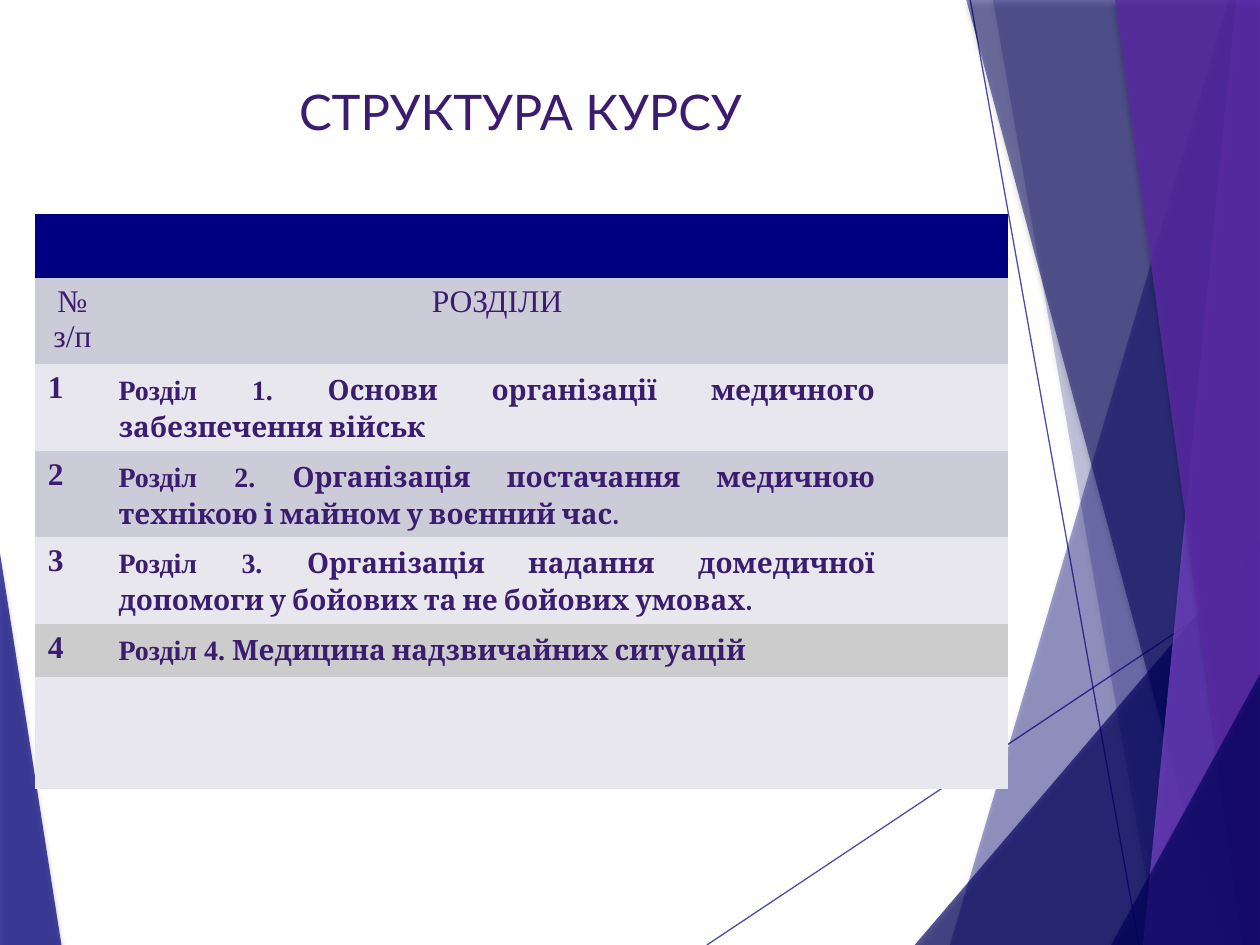
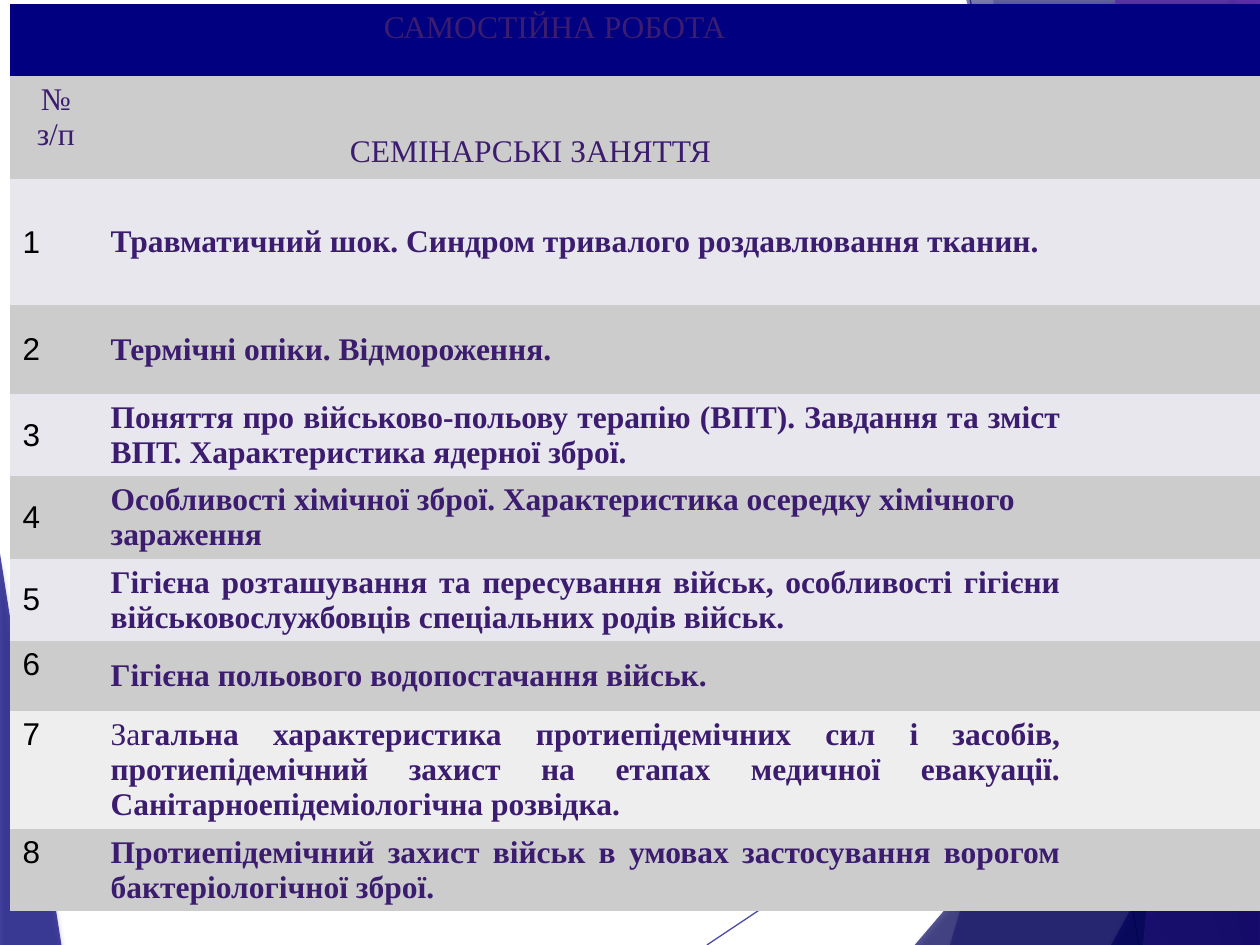
from dataclasses import dataclass
from typing import NamedTuple

from lxml import etree
from pptx import Presentation
from pptx.dml.color import RGBColor
from pptx.enum.shapes import MSO_CONNECTOR
from pptx.enum.text import MSO_ANCHOR, PP_ALIGN
from pptx.oxml.ns import qn
from pptx.util import Cm, Pt

LEFT, CENTER, JUSTIFY = PP_ALIGN.LEFT, PP_ALIGN.CENTER, PP_ALIGN.JUSTIFY
TOP, MIDDLE = MSO_ANCHOR.TOP, MSO_ANCHOR.MIDDLE
STRAIGHT = MSO_CONNECTOR.STRAIGHT
PLAIN_TABLE = "{2D5ABB26-0587-4C30-8999-92F81FD0307C}"
W, H = 25.4, 19.05


class Type(NamedTuple):
    font: str
    size: int
    color: str
    bold: bool = False


@dataclass(frozen=True)
class Theme:
    navy: str = "000080"
    deep: str = "000060"
    lilac: str = "7B46D0"
    purple: str = "5A2AA6"
    light: str = "E7E7ED"
    pale: str = "EEEEEE"
    bluish: str = "CCCCD8"
    gray: str = "CCCCCC"
    title: Type = Type("Lato", 28, "3C1C6F")
    head: Type = Type("Times New Roman", 18, "3C1C6F")
    strong: Type = Type("Times New Roman", 18, "3C1C6F", True)
    label: Type = Type("Times New Roman", 16, "3C1C6F", True)
    topic: Type = Type("Cambria", 16, "3C1C6F", True)
    number: Type = Type("Arial", 18, "000000")


THEME = Theme()

# Facets from back to front: points in cm, colour, opacity in percent
RIGHT_EDGE = [(W, H), (W, 0)]
LEFT_FACET = ([(0, 11.15), (1.24, H), (0, H)], THEME.navy, 70)
RIGHT_FACETS = [
    ([(24.77, 0), (19.15, H)] + RIGHT_EDGE, THEME.navy, 36),
    ([(20.02, 0), (23.34, H)] + RIGHT_EDGE, THEME.navy, 20),
    ([(18.44, H), (W, 10.9), (W, H)], THEME.deep, 66),
    ([(19.48, 0), (24.61, H)] + RIGHT_EDGE, THEME.deep, 50),
    ([(24.92, 0), (23.04, H)] + RIGHT_EDGE, THEME.lilac, 70),
    ([(22.48, 0), (25.07, H)] + RIGHT_EDGE, THEME.purple, 82),
    ([(22.4, H), (W, 13.59), (W, H)], THEME.deep, 66),
]
RAYS = [(14.25, H, W, 11.62), (19.56, 0, 22.96, H)]


def set_opacity(fill_parent, percent):
    color = next(fill_parent.iter(qn("a:srgbClr")))
    etree.SubElement(color, qn("a:alpha"), val=str(percent * 1000))


class Deck:
    def __init__(self, theme):
        self.theme = theme
        self.prs = Presentation()
        self.prs.slide_width, self.prs.slide_height = Cm(W), Cm(H)
        self.slide = None

    def new_slide(self):
        self.slide = self.prs.slides.add_slide(self.prs.slide_layouts[6])
        self.facet(*LEFT_FACET)
        for ray in RAYS:
            self.ray(*ray)
        for facet in RIGHT_FACETS:
            self.facet(*facet)

    def facet(self, points, color, opacity):
        start, *rest = [(Cm(x), Cm(y)) for x, y in points]
        builder = self.slide.shapes.build_freeform(*start)
        builder.add_line_segments(rest, close=True)
        sp = builder.convert_to_shape()
        sp.fill.solid()
        sp.fill.fore_color.rgb = RGBColor.from_string(color)
        sp.line.fill.background()
        props = sp._element.spPr
        set_opacity(props, opacity)
        # Soft shadow below the facet
        effects = etree.SubElement(props, qn("a:effectLst"))
        shadow = etree.SubElement(
            effects, qn("a:outerShdw"), blurRad=str(Pt(3)), dist=str(Pt(2)),
            dir="5400000", rotWithShape="0")
        black = etree.SubElement(shadow, qn("a:srgbClr"), val="000000")
        etree.SubElement(black, qn("a:alpha"), val="35000")

    def ray(self, x1, y1, x2, y2):
        line = self.slide.shapes.add_connector(
            STRAIGHT, Cm(x1), Cm(y1), Cm(x2), Cm(y2))
        line.line.color.rgb = RGBColor.from_string(self.theme.navy)
        line.line.width = Pt(0.75)
        props = line._element.spPr
        set_opacity(props, 70)
        etree.SubElement(props, qn("a:effectLst"))

    def add_runs(self, p, runs, align=LEFT):
        p.alignment = align
        for text, style in runs:
            r = p.add_run()
            r.text = text
            r.font.name, r.font.size = style.font, Pt(style.size)
            r.font.bold = style.bold
            r.font.color.rgb = RGBColor.from_string(style.color)

    def text(self, left, top, width, height, text, style):
        box = self.slide.shapes.add_textbox(
            Cm(left), Cm(top), Cm(width), Cm(height))
        tf = box.text_frame
        tf.word_wrap = True
        self.add_runs(tf.paragraphs[0], [(text, style)], CENTER)

    def table(self, left, top, widths, heights, fills):
        frame = self.slide.shapes.add_table(
            len(heights), len(widths), Cm(left), Cm(top),
            Cm(sum(widths)), Cm(sum(heights)))
        table = frame.table
        table._tbl.tblPr.find(qn("a:tableStyleId")).text = PLAIN_TABLE
        table.first_row = table.horz_banding = False
        for column, width in zip(table.columns, widths):
            column.width = Cm(width)
        for row, height, fill in zip(table.rows, heights, fills):
            row.height = Cm(height)
            for cell in row.cells:
                cell.fill.solid()
                cell.fill.fore_color.rgb = RGBColor.from_string(fill)
        table.cell(0, 0).merge(table.cell(0, len(widths) - 1))
        self.cell(table.cell(1, 0), [("№ з/п", self.theme.head)], CENTER)
        return table

    def cell(self, cell, runs, align=LEFT, anchor=TOP):
        cell.vertical_anchor = anchor
        p = cell.text_frame.paragraphs[0]
        self.add_runs(p, runs, align)
        return p

    def body_cell(self, cell, runs, anchor=TOP):
        cell.margin_left = cell.margin_right = Cm(0.18)
        return self.cell(cell, runs, JUSTIFY, anchor)


# Slide 1: course structure
def course_structure(deck):
    th = deck.theme
    deck.new_slide()
    sections = [
        "Основи організації медичного забезпечення військ",
        "Організація постачання медичною технікою і майном у воєнний час.",
        "Організація надання домедичної допомоги у бойових та не бойових умовах.",
        "Медицина надзвичайних ситуацій",
    ]
    table = deck.table(
        0.71, 4.32, [1.5, 15.62, 2.49],
        [1.29, 1.73, 1.75, 1.74, 1.75, 1.07, 1.12, 1.14],
        [th.navy, th.bluish, th.light, th.bluish, th.light, th.gray,
         th.light, th.light])
    deck.cell(table.cell(1, 1), [("РОЗДІЛИ", th.head)], CENTER)
    for n, section in enumerate(sections, 1):
        deck.cell(table.cell(n + 1, 0), [(str(n), th.strong)])
        p = deck.body_cell(table.cell(n + 1, 1),
                           [(f"Розділ {n}. ", th.label), (section, th.topic)])
        p.line_spacing, p.space_after = 1.15, Pt(10)
    deck.text(4.14, 1.52, 12.7, 1.42, "СТРУКТУРА КУРСУ", th.title)


# Slide 2: independent work
def independent_work(deck):
    th = deck.theme
    deck.new_slide()
    topics = [
        "Травматичний шок. Синдром тривалого роздавлювання тканин.",
        "Термічні опіки. Відмороження.",
        "Поняття про військово-польову терапію (ВПТ). Завдання та зміст ВПТ. "
        "Характеристика ядерної зброї.",
        "Особливості хімічної зброї. Характеристика осередку хімічного",
        "Гігієна розташування та пересування військ, особливості гігієни "
        "військовослужбовців спеціальних родів військ.",
        "Гігієна польового водопостачання військ.",
        "гальна характеристика протиепідемічних сил і засобів, "
        "протиепідемічний захист на етапах медичної евакуації. "
        "Санітарноепідеміологічна розвідка.",
        "Протиепідемічний захист військ в умовах застосування ворогом "
        "бактеріологічної зброї.",
    ]
    table = deck.table(
        0.2, 0.08, [1.85, 19.51, 3.84],
        [1.45, 2.08, 2.54, 1.79, 1.66, 1.66, 1.66, 1.41, 2.38, 1.66],
        [th.navy, th.gray] + [th.light, th.gray] * 3 + [th.pale, th.gray])
    header = table.cell(0, 0)
    header.margin_right = Cm(6.3)
    deck.cell(header, [("САМОСТІЙНА РОБОТА", th.head)], CENTER)
    for n, topic in enumerate(topics, 1):
        deck.cell(table.cell(n + 1, 0), [(str(n), th.number)],
                  anchor=MIDDLE if n < 6 else TOP)
        lead = [("За", th.head)] if n == 7 else []
        deck.body_cell(table.cell(n + 1, 1), lead + [(topic, th.strong)], MIDDLE)
    ending = table.cell(5, 1).text_frame.add_paragraph()
    deck.add_runs(ending, [("зараження", th.strong)])
    deck.text(4.32, 2.51, 12.75, 1.02, "СЕМІНАРСЬКІ ЗАНЯТТЯ", th.head)


def main():
    deck = Deck(THEME)
    course_structure(deck)
    independent_work(deck)
    deck.prs.save("out.pptx")


if __name__ == "__main__":
    main()
